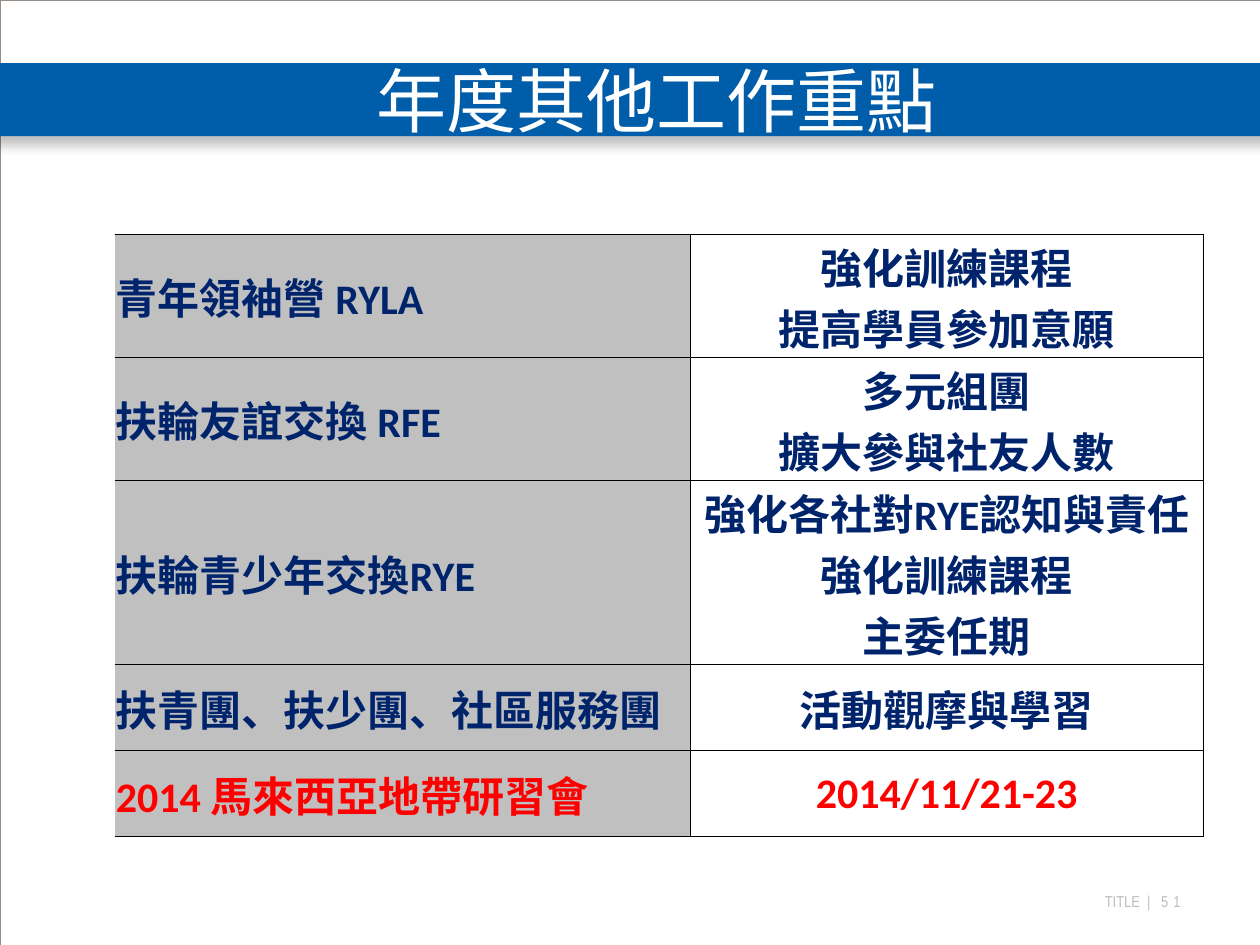
from lxml import etree
from pptx import Presentation
from pptx.dml.color import RGBColor
from pptx.enum.shapes import MSO_SHAPE
from pptx.enum.text import MSO_ANCHOR, PP_ALIGN
from pptx.oxml.ns import qn
from pptx.util import Inches, Pt

MIDDLE = MSO_ANCHOR.MIDDLE
LEFT, CENTER, RIGHT = PP_ALIGN.LEFT, PP_ALIGN.CENTER, PP_ALIGN.RIGHT
RECTANGLE = MSO_SHAPE.RECTANGLE

THEME = {
    "band": "005DAA", "frame": "958D85", "white": "FFFFFF", "footer": "BCBDC0",
    "navy": "00246C", "red": "FF0000", "gray": "C0C0C0", "black": "000000",
    "latin": "Calibri", "cjk": "Noto Sans CJK SC", "footer_font": "Arial Narrow",
    "title_size": 40, "table_size": 24, "footer_size": 9,
}

TITLE = "年度其他工作重點"
FOOTER = [("TITLE", 0), (" | ", 2), ("51", 3)]  # text, letter spacing in points
# topic, actions, row height, colour
ROWS = [
    ("青年領袖營 RYLA", ["強化訓練課程", "提高學員參加意願"], 0.68, "navy"),
    ("扶輪友誼交換 RFE", ["多元組團", "擴大參與社友人數"], 0.68, "navy"),
    ("扶輪青少年交換RYE", ["強化各社對RYE認知與責任強化訓練課程", "主委任期"], 0.79, "navy"),
    ("扶青團、扶少團、社區服務團", ["活動觀摩與學習"], 0.68, "navy"),
    ("2014 馬來西亞地帶研習會", ["2014/11/21-23"], 0.68, "red"),
]
COLUMN_WIDTHS = (4.57, 4.07)


def color(name):
    return RGBColor.from_string(THEME[name])


def place(shape, left, top, width, height):
    shape.left, shape.top = Inches(left), Inches(top)
    shape.width, shape.height = Inches(width), Inches(height)


def set_margins(frame, left=0, top=0, right=0, bottom=0):
    frame.margin_left, frame.margin_top = Inches(left), Inches(top)
    frame.margin_right, frame.margin_bottom = Inches(right), Inches(bottom)


def style(span, size, color_name, latin, bold=False):
    span.font.size, span.font.bold = Pt(size), bold
    span.font.color.rgb = color(color_name)
    span.font.name = latin
    east_asian = etree.Element(qn("a:ea"), typeface=THEME["cjk"])
    span.font._element.find(qn("a:latin")).addnext(east_asian)


def add_shadow(shape, alpha, blur, distance):
    effects = shape._element.spPr.find(qn("a:effectLst"))
    shadow = etree.SubElement(effects, qn("a:outerShdw"), blurRad=str(Pt(blur)),
                              dist=str(Pt(distance)), dir="5400000", rotWithShape="0")
    tint = etree.SubElement(shadow, qn("a:srgbClr"), val=THEME["black"])
    etree.SubElement(tint, qn("a:alpha"), val=str(alpha * 1000))


def set_borders(cell, widths):
    """Draw the left, right, top and bottom borders; a width of 0 hides one."""
    properties = cell._tc.get_or_add_tcPr()
    for index, (side, width) in enumerate(zip("LRTB", widths)):
        line = etree.Element(qn(f"a:ln{side}"), w=str(Pt(width)))
        if width:
            fill = etree.SubElement(line, qn("a:solidFill"))
            etree.SubElement(fill, qn("a:srgbClr"), val=THEME["black"])
        else:
            etree.SubElement(line, qn("a:noFill"))
        properties.insert(index, line)


def fill_cell(cell, lines, align, color_name):
    cell.vertical_anchor = MIDDLE
    set_margins(cell, 0.01, 0.01, 0.01)
    cell.text_frame.text = "\n".join(lines)
    for para in cell.text_frame.paragraphs:
        para.alignment = align
        style(para.runs[0], THEME["table_size"], color_name, THEME["latin"], bold=True)


def add_background(slide):
    footer = slide.shapes.add_textbox(Inches(7.75), Inches(7.08), Inches(1.75), Inches(0.15))
    footer.text_frame.word_wrap = True
    set_margins(footer.text_frame, right=0.13)
    para = footer.text_frame.paragraphs[0]
    para.alignment = RIGHT
    for text, spacing in FOOTER:
        span = para.add_run()
        span.text = text
        style(span, THEME["footer_size"], "footer", THEME["footer_font"])
        span.font._element.set("spc", str(spacing * 100))

    frame = slide.shapes.add_shape(RECTANGLE, 0, 0, Inches(10), Inches(7.5))
    frame.fill.background()
    frame.line.color.rgb = color("frame")
    frame.line.width = Pt(0.13)
    frame.shadow.inherit = False

    band = slide.shapes.add_shape(RECTANGLE, Inches(-0.08), Inches(0.5),
                                  Inches(10.17), Inches(0.58))
    band.fill.solid()
    band.fill.fore_color.rgb = color("band")
    band.line.fill.background()
    band.shadow.inherit = False
    add_shadow(band, alpha=25, blur=7, distance=4.8)


def add_title(slide):
    title = slide.shapes.title
    slide.shapes._spTree.append(title._element)  # bring in front of the band
    place(title, 0.42, 0.5, 9.58, 0.58)
    frame = title.text_frame
    frame.text = TITLE
    frame.vertical_anchor = MIDDLE
    set_margins(frame)
    frame.paragraphs[0].alignment = CENTER
    style(frame.paragraphs[0].runs[0], THEME["title_size"], "white", THEME["cjk"])


def add_plan_table(slide):
    heights = [row[2] for row in ROWS]
    table = slide.shapes.add_table(
        len(ROWS), len(COLUMN_WIDTHS), Inches(0.91), Inches(1.86),
        Inches(sum(COLUMN_WIDTHS)), Inches(sum(heights))).table
    table.first_row = table.horz_banding = False
    for column, width in zip(table.columns, COLUMN_WIDTHS):
        column.width = Inches(width)
    for index, (topic, actions, height, color_name) in enumerate(ROWS):
        table.rows[index].height = Inches(height)
        topic_cell, action_cell = table.rows[index].cells
        fill_cell(topic_cell, [topic], LEFT, color_name)
        fill_cell(action_cell, actions, CENTER, color_name)
        topic_cell.fill.solid()
        topic_cell.fill.fore_color.rgb = color("gray")
        action_cell.fill.background()
        top = 0.5 if index else 1
        set_borders(topic_cell, (0, 0.5, top, 0.5))
        set_borders(action_cell, (0.5, 0.5, top, 0.5))


def main():
    deck = Presentation()
    deck.slide_width, deck.slide_height = Inches(10), Inches(7.5)
    slide = deck.slides.add_slide(deck.slide_layouts[5])
    add_background(slide)
    add_title(slide)
    add_plan_table(slide)
    deck.save("out.pptx")


if __name__ == "__main__":
    main()
